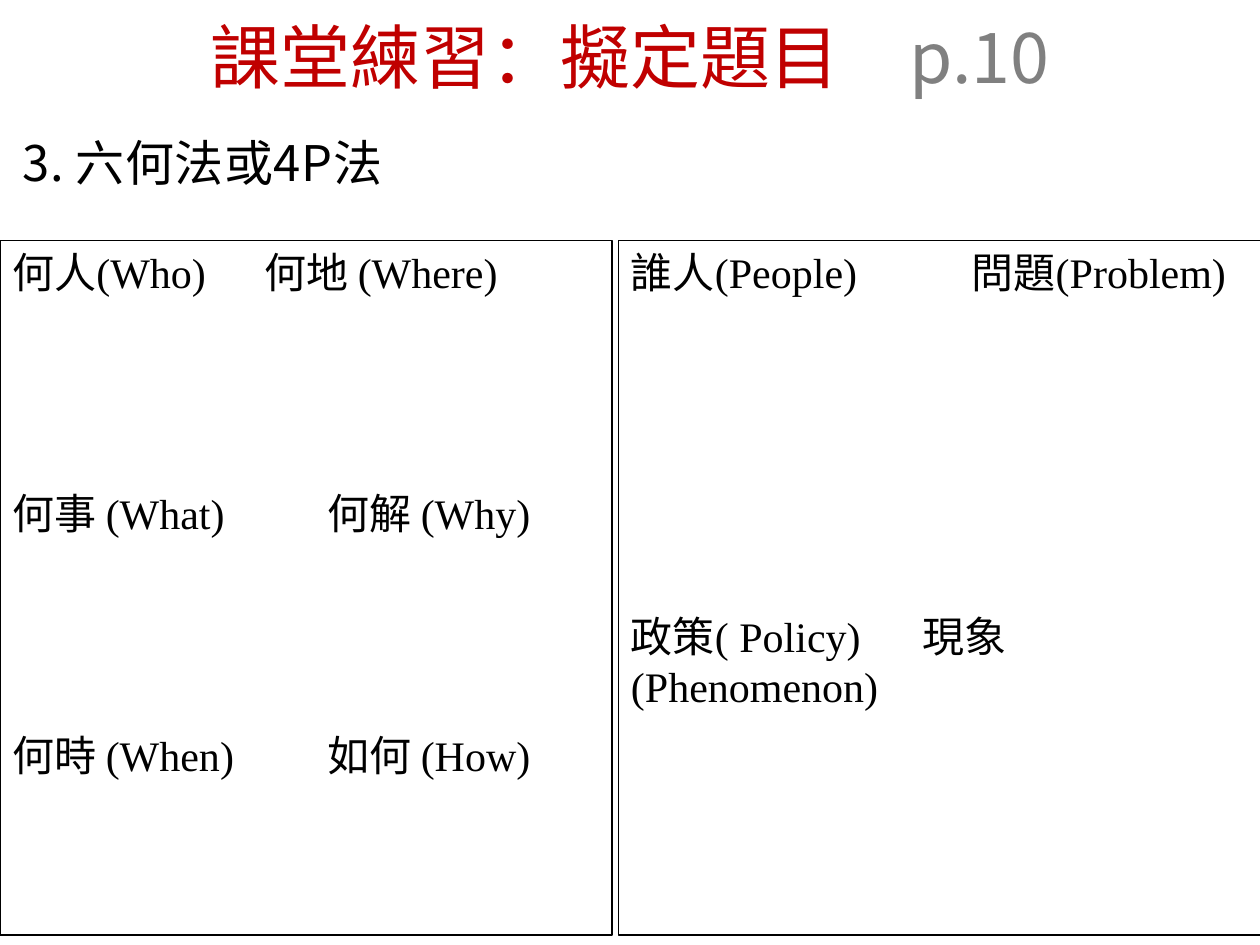
import pptx
import pptx.dml.color
import pptx.enum.shapes
import pptx.enum.text
import pptx.oxml.ns
import pptx.util
from dataclasses import dataclass
from lxml import etree

Cm, Pt = pptx.util.Cm, pptx.util.Pt
ALIGN, ANCHOR = pptx.enum.text.PP_ALIGN, pptx.enum.text.MSO_ANCHOR
qn = pptx.oxml.ns.qn


@dataclass(frozen=True)
class Theme:
    heading_font: str = "Noto Sans CJK SC"
    chinese_font: str = "Noto Sans CJK TC"
    english_font: str = "Times New Roman"
    red: str = "C00000"
    grey: str = "808080"
    ink: str = "000000"
    paper: str = "FFFFFF"
    title_size: int = 40
    step_size: int = 28
    panel_size: int = 24
    paragraph_gap: int = 6


theme = Theme()


def color(value):
    return pptx.dml.color.RGBColor.from_string(value)


def style_run(run, size, value, latin, east_asian):
    run.font.size = Pt(size)
    run.font.color.rgb = color(value)
    run.font.name = latin
    etree.SubElement(run._r.get_or_add_rPr(), qn("a:ea"), typeface=east_asian)


deck = pptx.Presentation()
deck.slide_width, deck.slide_height = Cm(25.4), Cm(19.05)
slide = deck.slides.add_slide(deck.slide_layouts[1])

# Heading and exercise step
heading = slide.shapes.title
heading.left, heading.top, heading.width, heading.height = Cm(0), Cm(0.2), Cm(25.4), Cm(1.9)
heading.text_frame.auto_size = pptx.enum.text.MSO_AUTO_SIZE.NONE
heading.text_frame.vertical_anchor = ANCHOR.BOTTOM
heading_line = heading.text_frame.paragraphs[0]
heading_line.alignment = ALIGN.CENTER
for words, value in [("課堂練習：擬定題目　", theme.red), ("p.10", theme.grey)]:
    run = heading_line.add_run()
    run.text = words
    style_run(run, theme.title_size, value, theme.heading_font, theme.heading_font)

step = slide.placeholders[1]
step.left, step.top, step.width, step.height = Cm(0.2), Cm(2.54), Cm(25.2), Cm(16.3)
step.text_frame.auto_size = pptx.enum.text.MSO_AUTO_SIZE.NONE
step.text_frame.text = "3. 六何法或4P法"
step_line = step.text_frame.paragraphs[0]
step_line.space_before = Pt(theme.paragraph_gap)
step_format = step_line._p.get_or_add_pPr()
step_format.set("marL", "0")
step_format.set("indent", "0")
etree.SubElement(step_format, qn("a:buNone"))
style_run(step_line.runs[0], theme.step_size, theme.ink, theme.heading_font, theme.heading_font)
step_line.runs[0].font._element.set("spc", "30")

# Each line: space before in points, alignment, tab stop in cm or None, (words, font) runs
zh, en = theme.chinese_font, theme.english_font
answer_gap = 109
four_p = [
    (theme.paragraph_gap, ALIGN.JUSTIFY, 6.87, [("誰人(People)\t問題(Problem)", en)]),
    (179, ALIGN.LEFT, 5.87, [("政策( Policy)\t現象(Phenomenon)", en)]),
]
six_questions = [
    (theme.paragraph_gap, ALIGN.JUSTIFY, None,
     [("何人", zh), ("(Who)\t", en), ("何地", zh), (" (Where)", en)]),
    (answer_gap, ALIGN.JUSTIFY, None,
     [("何事", zh), (" (What)\t\t", en), ("何解", zh), (" (Why)", en)]),
    (answer_gap, ALIGN.JUSTIFY, None,
     [("何時", zh), (" (When)\t\t", en), ("如何", zh), (" (How)", en)]),
]

# Two answer panels: left, width, right inset, lines
for left, width, inset, lines in [(12.47, 13.16, 0.5, four_p), (0, 12.34, 0.25, six_questions)]:
    panel = slide.shapes.add_shape(
        pptx.enum.shapes.MSO_SHAPE.RECTANGLE, Cm(left), Cm(4.85), Cm(width), Cm(14))
    panel.shadow.inherit = False
    panel.fill.solid()
    panel.fill.fore_color.rgb = color(theme.paper)
    panel.line.color.rgb = color(theme.ink)
    panel.line.width = Pt(0.75)
    frame = panel.text_frame
    frame.word_wrap = True
    frame.vertical_anchor = ANCHOR.TOP
    frame.margin_right = Cm(inset)
    for index, (gap, alignment, tab_stop, pieces) in enumerate(lines):
        line = frame.add_paragraph() if index else frame.paragraphs[0]
        line.alignment = alignment
        line.space_before = Pt(gap)
        if tab_stop:
            tabs = etree.SubElement(line._p.get_or_add_pPr(), qn("a:tabLst"))
            etree.SubElement(tabs, qn("a:tab"), pos=str(Cm(tab_stop)), algn="l")
        for words, font in pieces:
            run = line.add_run()
            run.text = words
            style_run(run, theme.panel_size, theme.ink, font, zh)

deck.save("out.pptx")
